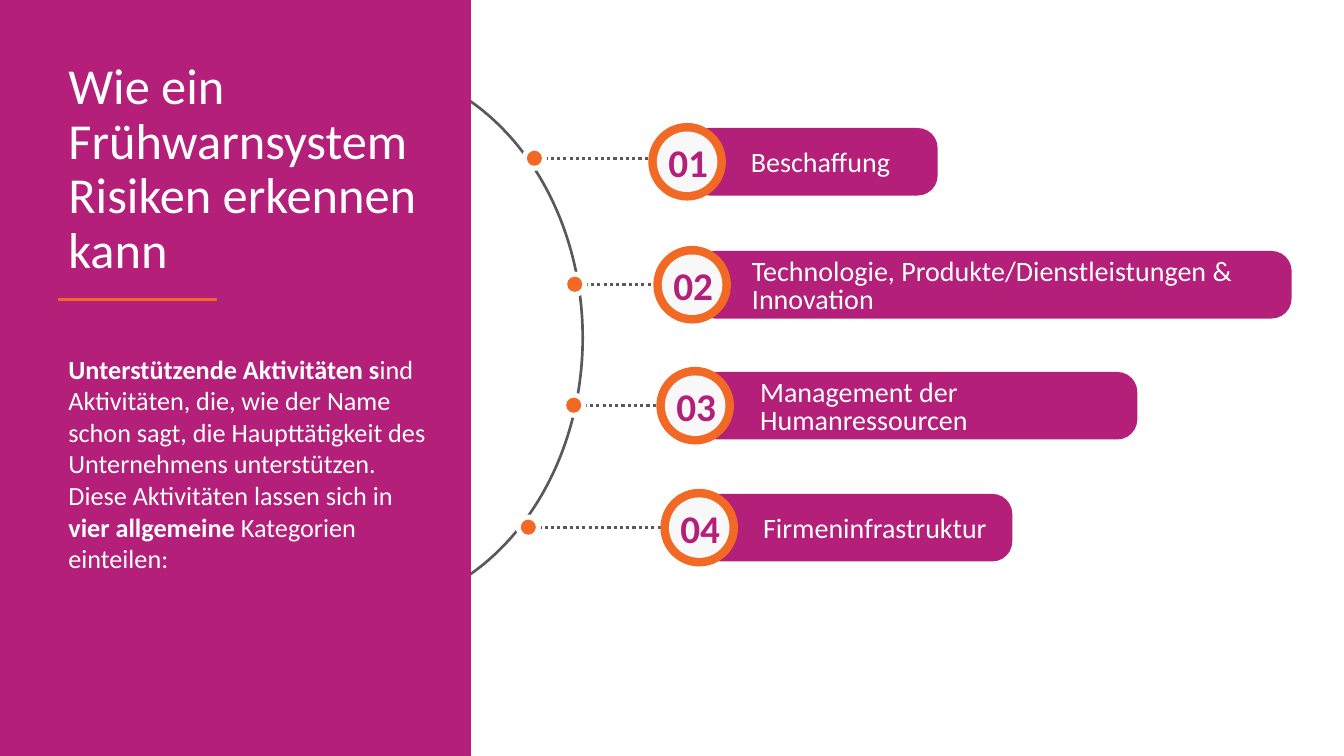
from dataclasses import dataclass

from pptx import Presentation
from pptx.dml.color import RGBColor
from pptx.enum.dml import MSO_LINE
from pptx.enum.shapes import MSO_CONNECTOR, MSO_SHAPE
from pptx.enum.text import MSO_ANCHOR
from pptx.oxml.ns import qn
from pptx.util import Inches, Pt


@dataclass(frozen=True)
class Theme:
    font: str = "Calibri"
    magenta: str = "B41F7A"
    orange: str = "F16924"
    grey: str = "595959"
    white: str = "FFFFFF"
    pale: str = "F8F8F8"
    title: float = 36
    body: float = 18.7
    label: float = 20
    number: float = 28


T = Theme()

TITLE = "Wie ein Frühwarnsystem Risiken erkennen kann"
# Paragraphs of (text, bold) runs
INTRO = [
    [("Unterstützende Aktivitäten s", True),
     ("ind Aktivitäten, die, wie der Name schon sagt, die Haupttätigkeit "
      "des Unternehmens unterstützen.", False)],
    [("Diese Aktivitäten lassen sich in ", False),
     ("vier allgemeine ", True),
     ("Kategorien einteilen:", False)],
]
# label, node centre, badge corner, pill width, label offset, label width
CATEGORIES = [
    ("Beschaffung", (5.3, 1.57), (6.43, 1.22), 2.46, 0.92, 4.28),
    ("Technologie, Produkte/Dienstleistungen & Innovation",
     (5.7, 2.82), (6.48, 2.44), 5.92, 0.88, 5.45),
    ("Management der Humanressourcen",
     (5.69, 4.02), (6.51, 3.64), 4.36, 0.93, 3.85),
    ("Firmeninfrastruktur", (5.24, 5.23), (6.55, 4.85), 3.08, 0.92, 3.37),
]


def add_filled(s, kind, x, y, w, h, color):
    sp = s.shapes.add_shape(kind, Inches(x), Inches(y), Inches(w), Inches(h))
    sp.shadow.inherit = False
    sp.fill.solid()
    sp.fill.fore_color.rgb = RGBColor.from_string(color)
    sp.line.fill.background()
    return sp


def add_disc(s, cx, cy, d, color):
    add_filled(s, MSO_SHAPE.OVAL, cx - d / 2, cy - d / 2, d, d, color)


def add_text(s, x, y, w, h, paragraphs, size, color=T.white, spacing=None,
             anchor=MSO_ANCHOR.TOP):
    box = s.shapes.add_textbox(Inches(x), Inches(y), Inches(w), Inches(h))
    tf = box.text_frame
    tf.word_wrap = True
    tf.vertical_anchor = anchor
    for i, runs in enumerate(paragraphs):
        p = tf.add_paragraph() if i else tf.paragraphs[0]
        p.font.name, p.font.size = T.font, Pt(size)
        p.font.color.rgb = RGBColor.from_string(color)
        if spacing:
            p.line_spacing = spacing
        for text, bold in runs:
            r = p.add_run()
            r.text, r.font.bold = text, bold


def add_arc(s, x, y, w, h):
    """Right half of the ellipse that fills the box."""
    sp = s.shapes.add_shape(MSO_SHAPE.ARC, Inches(x), Inches(y),
                            Inches(w), Inches(h))
    sp.shadow.inherit = False
    sp.adjustments[0], sp.adjustments[1] = 162, 54  # 270 to 90 degrees
    sp.fill.background()
    sp.line.color.rgb = RGBColor.from_string(T.grey)
    sp.line.width = Pt(1.91)


def add_node(s, cx, cy, end):
    """Dotted line from a dot on the arc, with a white gap around the dot."""
    c = s.shapes.add_connector(MSO_CONNECTOR.STRAIGHT, Inches(cx + 0.1),
                               Inches(cy), Inches(end), Inches(cy))
    c.line.color.rgb = RGBColor.from_string(T.grey)
    c.line.width = Pt(2.25)
    c.line.dash_style = MSO_LINE.ROUND_DOT
    spPr = c._element.spPr
    spPr.append(spPr.makeelement(qn("a:effectLst"), {}))
    add_disc(s, cx, cy, 0.25, T.white)
    add_disc(s, cx, cy, 0.15, T.orange)


def add_panel(s, x, y, w, h):
    add_filled(s, MSO_SHAPE.RECTANGLE, x, y, w, h, T.magenta)
    left = x + 0.58
    add_text(s, left, y + 0.56, 3.79, 2.69, [[(TITLE, False)]], T.title,
             spacing=0.9)
    add_text(s, left, y + 3.45, 3.79, 2.47, INTRO, T.body, spacing=Pt(22.6))
    rule = add_filled(s, MSO_SHAPE.RECTANGLE, left, y + 2.96, 1.57, 0.02,
                      T.orange)
    rule.line.color.rgb = RGBColor.from_string(T.orange)
    rule.line.width = Pt(1)


def add_category(s, x, y, number, label, pill_w, label_dx, label_w):
    """Numbered badge with its pill; x, y is the corner of the badge."""
    badge, pill_h = 0.77, 0.67
    cx, cy = x + badge / 2, y + badge / 2
    pill = add_filled(s, MSO_SHAPE.ROUNDED_RECTANGLE, x + 0.41,
                      cy - pill_h / 2, pill_w, pill_h, T.magenta)
    pill.adjustments[0] = 0.296
    add_text(s, x + label_dx, cy - pill_h / 2 + 0.02, label_w, pill_h,
             [[(label, False)]], T.label, spacing=Pt(20.4),
             anchor=MSO_ANCHOR.MIDDLE)
    add_disc(s, cx, cy, badge, T.orange)
    add_disc(s, cx, cy, 0.6, T.pale)
    add_text(s, x + 0.1, y + 0.1, 0.61, 0.57, [[(f"{number:02}", True)]],
             T.number, T.magenta)


def main():
    prs = Presentation()
    prs.slide_width, prs.slide_height = Inches(13.33), Inches(7.5)
    s = prs.slides.add_slide(prs.slide_layouts[6])

    # Arc and its nodes, partly behind the panel
    add_arc(s, 1.32, 0.64, 4.46, 5.42)
    for _, (cx, cy), (x, _), *_ in CATEGORIES:
        add_node(s, cx, cy, x + 0.62)

    # Title panel
    add_panel(s, 0, 0, 4.67, 7.5)

    # Categories
    for i, (label, _, (x, y), *widths) in enumerate(CATEGORIES, 1):
        add_category(s, x, y, i, label, *widths)

    prs.save("out.pptx")


if __name__ == "__main__":
    main()
